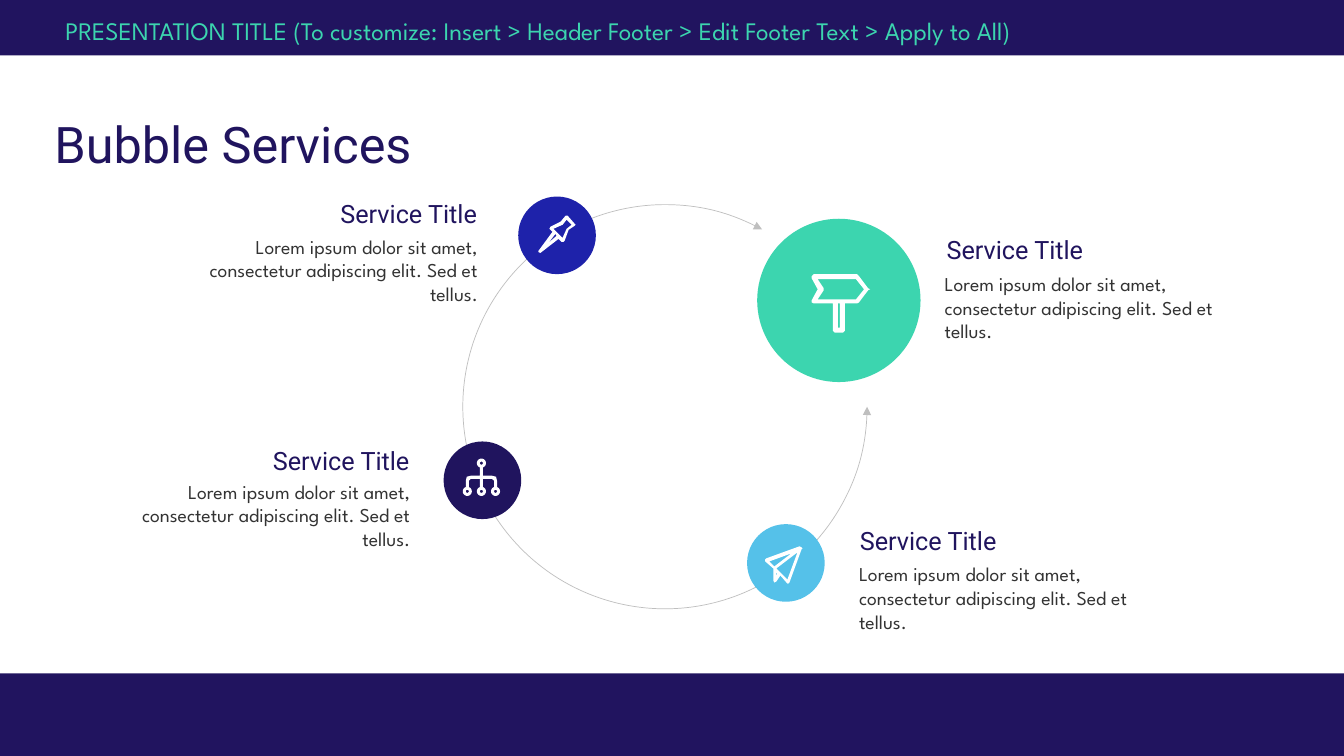
from dataclasses import dataclass
from math import cos, pi, sin

from lxml import etree
from pptx import Presentation
from pptx.dml.color import RGBColor
from pptx.enum.shapes import MSO_SHAPE
from pptx.enum.text import MSO_ANCHOR, MSO_AUTO_SIZE, PP_ALIGN
from pptx.oxml.ns import qn
from pptx.util import Pt

RECT, OVAL, ARC = MSO_SHAPE.RECTANGLE, MSO_SHAPE.OVAL, MSO_SHAPE.ARC
LEFT, RIGHT = PP_ALIGN.LEFT, PP_ALIGN.RIGHT
TOP = MSO_ANCHOR.TOP
GROW, FIXED = MSO_AUTO_SIZE.SHAPE_TO_FIT_TEXT, MSO_AUTO_SIZE.NONE
PX = 9144


@dataclass(frozen=True)
class Theme:
    band: str = "21145F"
    navy: str = "20145E"
    blue: str = "1E22AA"
    sky: str = "55C1E9"
    mint: str = "3CD5AF"
    white: str = "FFFFFF"
    gray: str = "BFBFBF"
    ink: str = "333333"
    head: str = "Roboto"
    text: str = "League Spartan"
    title: int = 36
    sub: int = 18
    body: int = 14
    hair: float = 0.5


class Deck:
    """Draws styled elements on the current slide."""

    def __init__(self, theme, wide, high):
        self.theme = theme
        self.file = Presentation()
        self.file.slide_width, self.file.slide_height = wide * PX, high * PX
        self.slide = self.file.slides.add_slide(self.file.slide_layouts[6])

    def shape(self, kind, box, fill=None):
        item = self.slide.shapes.add_shape(kind, *(n * PX for n in box))
        self.paint(item, fill)
        return item

    def paint(self, item, fill):
        item.shadow.inherit = False
        item.line.fill.background()
        if fill:
            item.fill.solid()
            item.fill.fore_color.rgb = RGBColor.from_string(fill)
        else:
            item.fill.background()

    def arc(self, box, start, end, turn):
        item = self.shape(ARC, box)
        item.rotation = turn
        item.adjustments[0], item.adjustments[1] = start, end
        item.line.color.rgb = RGBColor.from_string(self.theme.gray)
        item.line.width = Pt(self.theme.hair)
        line = item.element.spPr.find(qn("a:ln"))
        for tag in ("a:headEnd", "a:tailEnd"):
            etree.SubElement(line, qn(tag), type="triangle")

    def icon(self, x, y, rings):
        rings = [[((x + a) * PX, (y + b) * PX) for a, b in ring] for ring in rings]
        pen = self.slide.shapes.build_freeform(*rings[0][0])
        pen.add_line_segments(rings[0][1:])
        for ring in rings[1:]:
            pen.move_to(*ring[0])
            pen.add_line_segments(ring[1:])
        self.paint(pen.convert_to_shape(), self.theme.white)

    def text(self, words, box, *, size, font, color, align=LEFT, pad=(10, 5),
             grow=True, space=None):
        item = self.slide.shapes.add_textbox(*(n * PX for n in box))
        frame = item.text_frame
        frame.word_wrap = True
        frame.auto_size = GROW if grow else FIXED
        frame.vertical_anchor = TOP
        frame.margin_left = frame.margin_right = pad[0] * PX
        frame.margin_top = frame.margin_bottom = pad[1] * PX
        para = frame.paragraphs[0]
        para.alignment = align
        if space:
            para.line_spacing = space
        run = para.add_run()
        run.text = words
        run.font.size, run.font.name = Pt(size), font
        run.font.color.rgb = RGBColor.from_string(color)


def disc(x, y, r, count=24):
    turns = [2 * pi * i / count for i in range(count)]
    return [(x + r * cos(t), y + r * sin(t)) for t in turns]


NODES = [(18.5, 4.5)] + [(x, 32.5) for x in (4.5, 18.5, 32.5)]
TREE = [
    [(17, 9), (20, 9), (20, 17), (29, 17), (33, 18), (34, 22), (34, 28),
     (31, 28), (31, 22), (29, 20), (20, 20), (20, 28), (17, 28), (17, 20),
     (8, 20), (6, 22), (6, 28), (3, 28), (3, 22), (4, 18), (8, 17), (17, 17)],
] + [disc(x, y, r) for x, y in NODES for r in (4.5, 1.5)]
PIN = [
    [(36, 8), (29, 0), (27, 0), (22, 6), (12, 11), (11, 13), (14, 16), (0, 35),
     (0, 36), (2, 37), (20, 23), (23, 26), (25, 26), (26, 25), (30, 14),
     (36, 10), (37, 9)],
    [(10, 27), (17, 18), (18, 20)],
    [(28, 13), (24, 22), (15, 13), (24, 9), (28, 4), (33, 9)],
]
PLANE = [
    [(36, 1), (34, 0), (1, 12), (0, 13), (0, 15), (8, 22), (8, 34), (9, 36),
     (11, 35), (15, 29), (22, 37), (23, 37), (24, 36), (36, 3), (37, 2)],
    [(26, 7), (9, 20), (4, 15)],
    [(11, 30), (11, 26), (12, 27)],
    [(22, 33), (11, 22), (32, 6)],
]
SIGN = [
    [(56, 14), (47, 2), (45, 0), (2, 0), (0, 2), (0, 4), (6, 15), (0, 26),
     (0, 28), (2, 29), (21, 29), (21, 56), (23, 58), (31, 58), (33, 56),
     (33, 29), (45, 29), (47, 28), (56, 16), (58, 15)],
    [(28, 53), (26, 53), (26, 29), (28, 29)],
    [(44, 25), (6, 25), (12, 16), (12, 14), (6, 5), (44, 5), (52, 15)],
]
LOREM = "Lorem ipsum dolor sit amet, consectetur adipiscing elit. Sed et tellus."
BANNER = ("PRESENTATION TITLE (To customize: Insert > Header Footer > "
          "Edit Footer Text > Apply to All)")


def main():
    look = Theme()
    deck = Deck(look, 1333, 750)
    deck.shape(RECT, (-18, -27, 1379, 82), look.band)
    deck.shape(RECT, (0, 668, 1333, 82), look.band)
    deck.arc((459, 203, 401, 401), 162, 125.24, 90)
    deck.text("Bubble Services", (54, 119, 1158, 109), size=look.title,
              font=look.head, color=look.navy, pad=(0, 0), grow=False, space=0.9)
    deck.text(BANNER, (55, 10, 1156, 40), size=look.sub, font=look.text,
              color=look.mint, grow=False)
    services = [
        (look.mint, (751, 217, 162), SIGN, (805, 272), (929, 228), (937, 265, 267), LEFT),
        (look.sky, (741, 520, 77), PLANE, (759, 542), (843, 516), (852, 553, 272), LEFT),
        (look.blue, (514, 195, 77), PIN, (534, 214), (255, 192), (205, 228, 269), RIGHT),
        (look.navy, (440, 438, 77), TREE, (459, 455), (188, 437), (138, 471, 269), RIGHT),
    ]
    for color, (x, y, size), rings, spot, head, body, align in services:
        deck.shape(OVAL, (x, y, size, size), color)
        deck.icon(*spot, rings)
        deck.text("Service Title", (*head, 228, 40), size=look.sub,
                  font=look.head, color=look.navy, align=align)
        deck.text(LOREM, (*body, 81), size=look.body, font=look.text,
                  color=look.ink, align=align, pad=(0, 5))
    deck.file.save("out.pptx")


if __name__ == "__main__":
    main()
